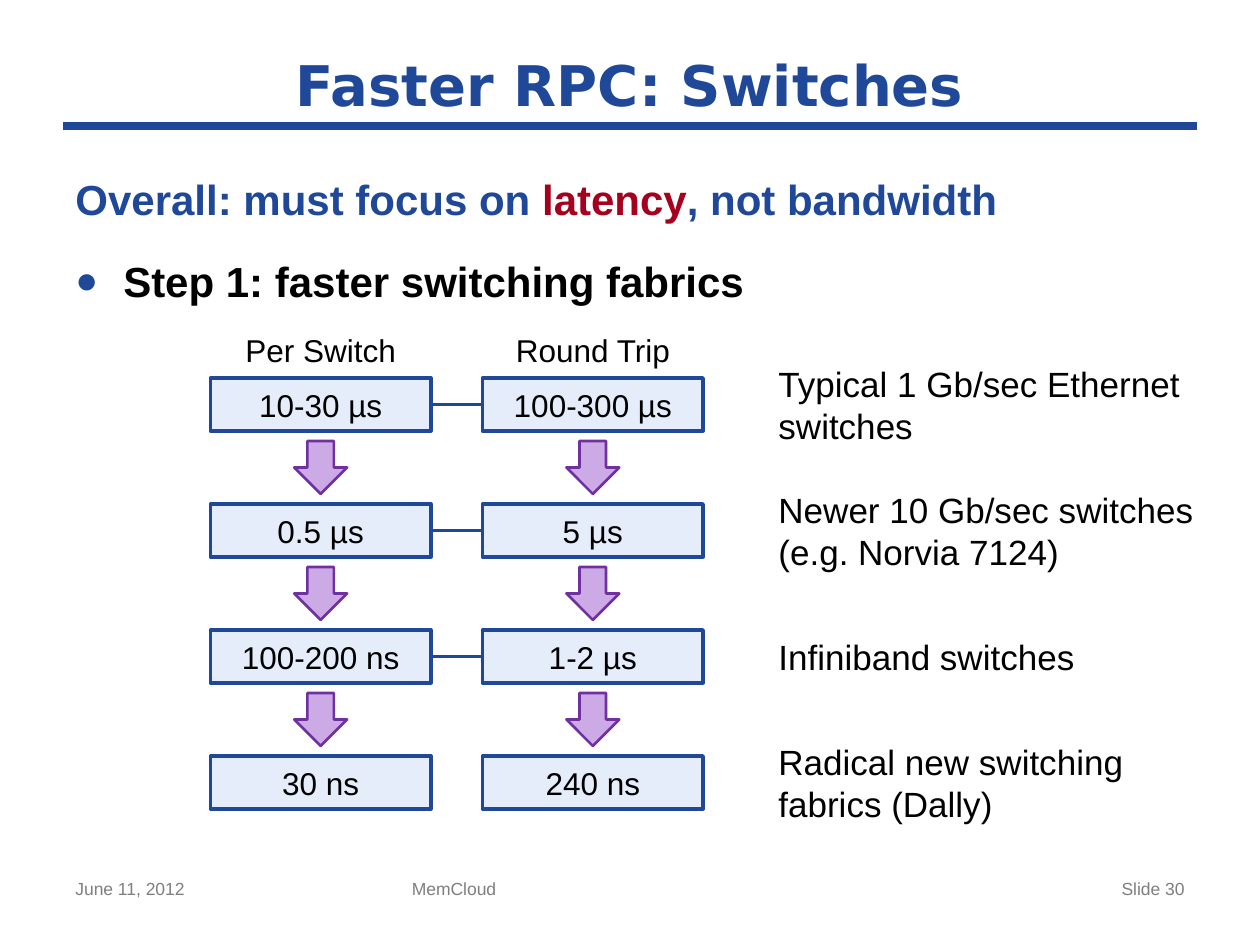
from lxml.etree import SubElement
from pptx import Presentation
from pptx.dml.color import RGBColor
from pptx.enum.shapes import MSO_CONNECTOR as Connector, MSO_SHAPE as Shape
from pptx.enum.text import MSO_ANCHOR as Anchor, PP_ALIGN as Align
from pptx.oxml.ns import qn
from pptx.util import Inches, Pt

TITLE = "Faster RPC: Switches"
OVERALL = [("Overall: must focus on ", "navy"), ("latency", "red"),
           (", not bandwidth", "navy")]
STEP = [("Step 1: faster switching fabrics", "black")]
HEADINGS = ["Per Switch", "Round Trip"]
STAGES = [
    (["10-30 µs", "100-300 µs"], "Typical 1 Gb/sec Ethernet\nswitches"),
    (["0.5 µs", "5 µs"], "Newer 10 Gb/sec switches\n(e.g. Norvia 7124)"),
    (["100-200 ns", "1-2 µs"], "Infiniband switches"),
    (["30 ns", "240 ns"], "Radical new switching\nfabrics (Dally)"),
]
FOOTERS = [  # text, left, width, alignment
    ("June 11, 2012", 0.5, 2.33, Align.LEFT),
    ("MemCloud", 3.17, 3.75, Align.LEFT),
    ("Slide 30", 7.17, 2.33, Align.RIGHT),
]

THEME = {
    "colors": {"navy": "1F4899", "red": "A5001E", "black": "000000",
               "gray": "7F7F7F", "pale": "E6EDFA", "lilac": "CCAAE6",
               "purple": "7030A0"},
    "title": {"name": "DejaVu Sans", "size": Pt(32), "bold": True},
    "body": {"name": "Arial", "size": Pt(24), "bold": True},
    "note": {"name": "Arial", "size": Pt(20)},
    "label": {"name": "Arial", "size": Pt(18)},
    "footer": {"name": "Arial", "size": Pt(10)},
}

COLUMNS = [1.67, 3.83]
FIRST_ROW, ROW_STEP = 3, 1
BOX_WIDTH, BOX_HEIGHT = 1.75, 0.42
ARROW_SIZE, ARROW_DROP = 0.42, 0.5
HEADING_HEIGHT = 0.4
NOTE_LEFT, NOTE_WIDTH, NOTE_HEIGHT = 6.08, 3.8, 0.77


def color(name):
    return RGBColor.from_string(THEME["colors"][name])


def write(para, spans, style, align=Align.LEFT):
    """Fill a paragraph with (text, color name) spans; newlines break lines."""
    para.alignment = align
    for text, tint in spans:
        for index, line in enumerate(text.split("\n")):
            if index:
                para.add_line_break()
            span = para.add_run()
            span.text = line
            for key, value in THEME[style].items():
                setattr(span.font, key, value)
            span.font.color.rgb = color(tint)


def add_text(slide, area, spans, style, align=Align.LEFT, anchor=Anchor.TOP):
    frame = slide.shapes.add_textbox(*map(Inches, area)).text_frame
    frame.word_wrap = True
    frame.vertical_anchor = anchor
    write(frame.paragraphs[0], spans, style, align)
    return frame


def add_block(slide, kind, area, fill, outline, weight):
    block = slide.shapes.add_shape(kind, *map(Inches, area))
    block.shadow.inherit = False
    block.fill.solid()
    block.fill.fore_color.rgb = color(fill)
    block.line.color.rgb = color(outline)
    block.line.width = Pt(weight)
    return block


def add_line(slide, start, end, weight):
    line = slide.shapes.add_connector(
        Connector.STRAIGHT, *map(Inches, (*start, *end)))
    line.line.color.rgb = color("navy")
    line.line.width = Pt(weight)
    SubElement(line.element.spPr, qn("a:effectLst"))
    return line


def add_bullet(para):
    props = para._p.get_or_add_pPr()
    props.set("marL", str(Inches(0.38)))
    props.set("indent", str(-Inches(0.38)))
    tint = SubElement(props, qn("a:buClr"))
    SubElement(tint, qn("a:srgbClr"), val=THEME["colors"]["navy"])
    SubElement(props, qn("a:buSzPct"), val="90000")
    SubElement(props, qn("a:buFont"), typeface="Arial")
    SubElement(props, qn("a:buChar"), char="●")


def add_heading_area(slide):
    add_line(slide, (0.5, 1), (9.5, 1), 4.5)
    add_text(slide, (0.5, 0.33, 9, 0.67), [(TITLE, "navy")], "title",
             Align.CENTER, Anchor.MIDDLE)
    body = add_text(slide, (0.5, 1.33, 8.59, 1.2), OVERALL, "body")
    body.paragraphs[0].space_before = Pt(12)
    step = body.add_paragraph()
    write(step, STEP, "body")
    step.space_before = Pt(18)
    add_bullet(step)


def add_stage(slide, row, times, note):
    top = FIRST_ROW + row * ROW_STEP
    is_last = row == len(STAGES) - 1
    boxes = []
    for left, time in zip(COLUMNS, times):
        box = add_block(slide, Shape.RECTANGLE,
                        (left, top, BOX_WIDTH, BOX_HEIGHT), "pale", "navy", 2)
        box.text_frame.vertical_anchor = Anchor.MIDDLE
        write(box.text_frame.paragraphs[0], [(time, "black")], "label",
              Align.CENTER)
        boxes.append(box)
        if not is_last:
            arrow_left = left + (BOX_WIDTH - ARROW_SIZE) / 2
            add_block(slide, Shape.DOWN_ARROW,
                      (arrow_left, top + ARROW_DROP, ARROW_SIZE, ARROW_SIZE),
                      "lilac", "purple", 1.5)
    middle = top + BOX_HEIGHT / 2
    if not is_last:
        link = add_line(slide, (COLUMNS[0] + BOX_WIDTH, middle),
                        (COLUMNS[1], middle), 2)
        link.begin_connect(boxes[0], 3)
        link.end_connect(boxes[1], 1)
    add_text(slide,
             (NOTE_LEFT, middle - NOTE_HEIGHT / 2, NOTE_WIDTH, NOTE_HEIGHT),
             [(note, "black")], "note", anchor=Anchor.MIDDLE)


def main():
    deck = Presentation()
    deck.slide_width, deck.slide_height = Inches(10), Inches(7.5)
    slide = deck.slides.add_slide(deck.slide_layouts[6])
    add_heading_area(slide)
    for left, heading in zip(COLUMNS, HEADINGS):
        add_text(slide, (left, 2.58, BOX_WIDTH, HEADING_HEIGHT),
                 [(heading, "black")], "label", Align.CENTER)
    for row, (times, note) in enumerate(STAGES):
        add_stage(slide, row, times, note)
    for text, left, width, align in FOOTERS:
        add_text(slide, (left, 6.92, width, 0.43), [(text, "gray")],
                 "footer", align)
    deck.save("out.pptx")


if __name__ == "__main__":
    main()
